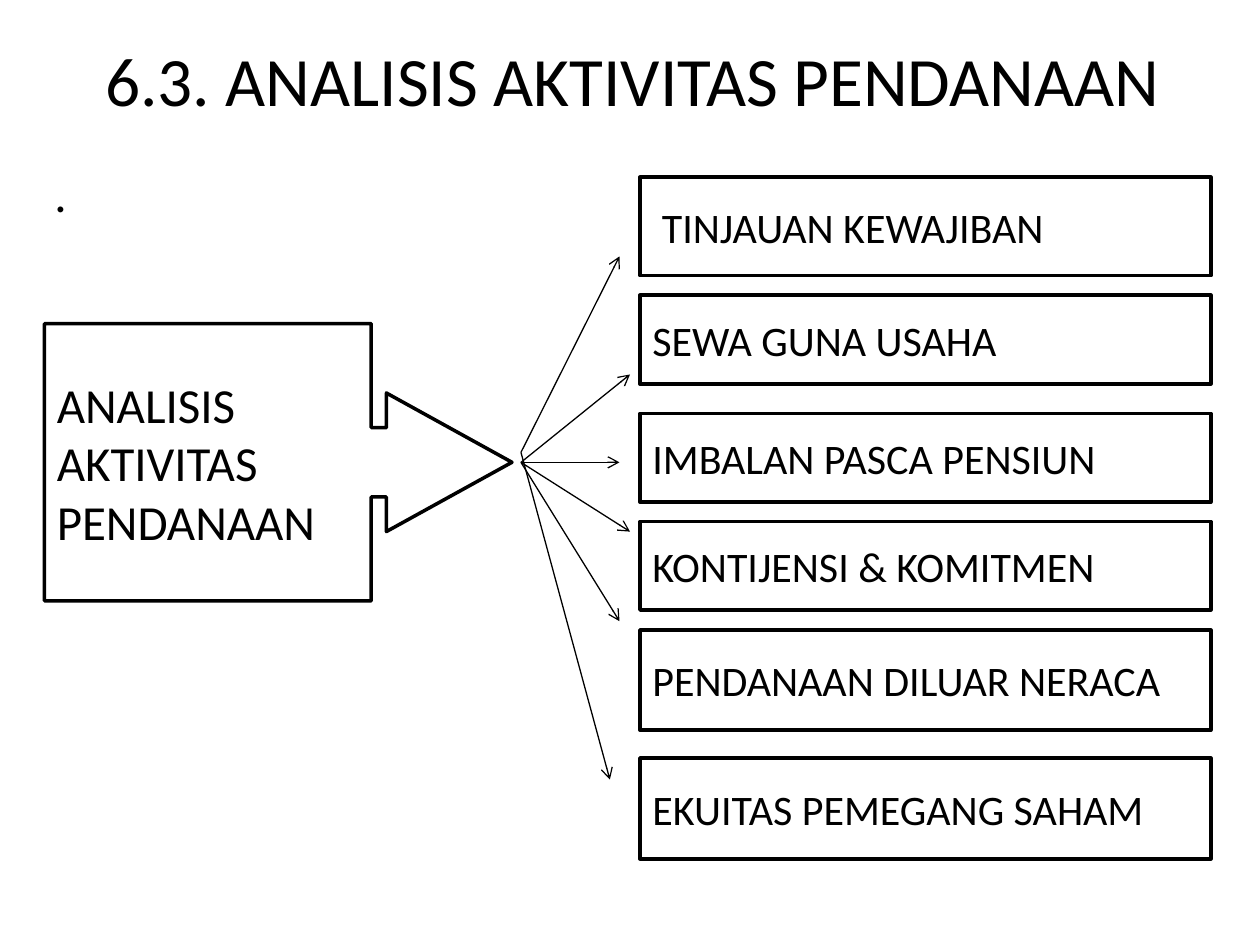
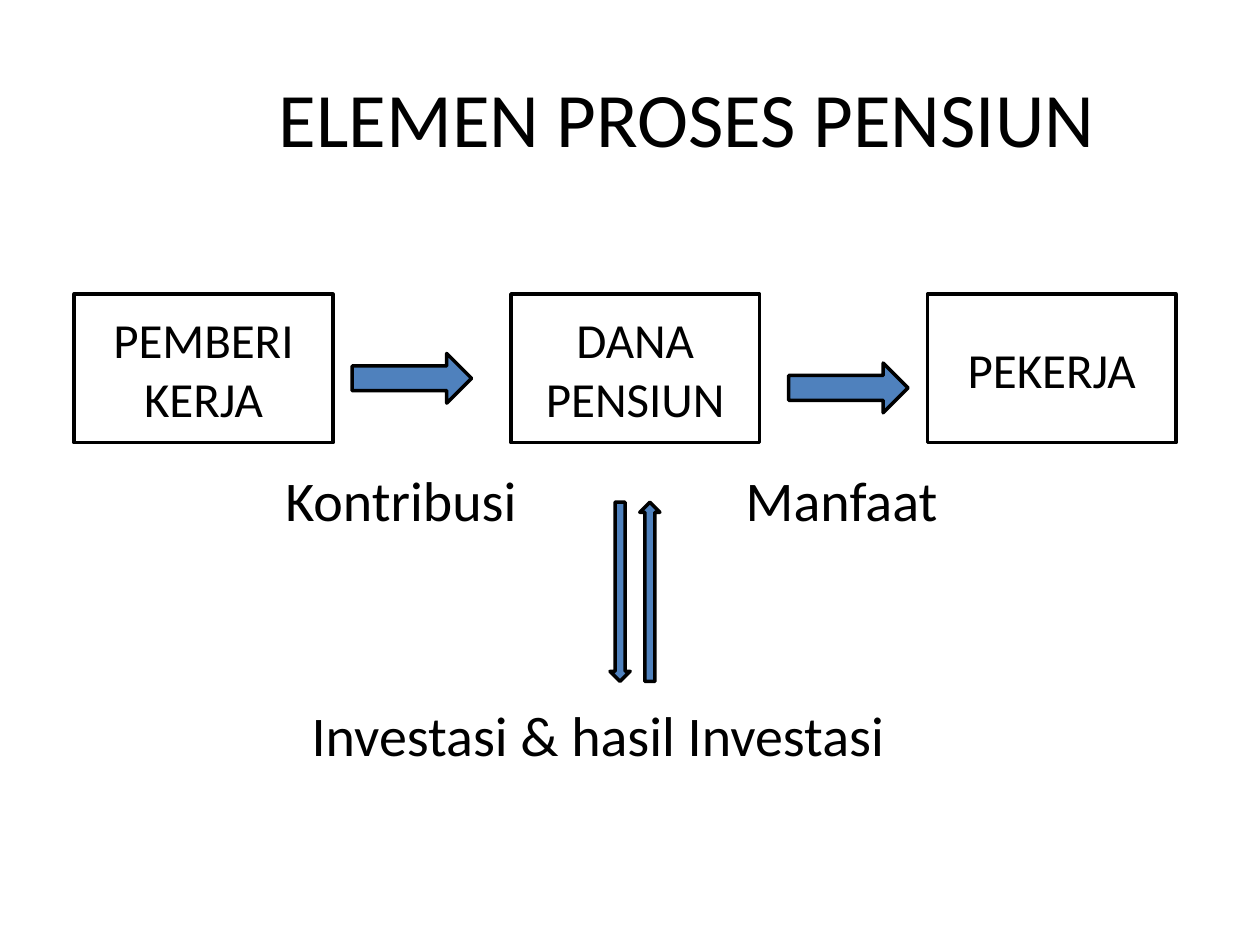
from pptx import Presentation
from pptx.dml.color import RGBColor
from pptx.enum.shapes import MSO_CONNECTOR, MSO_SHAPE
from pptx.enum.text import MSO_ANCHOR, PP_ALIGN
from pptx.oxml.ns import qn
from pptx.util import Pt
from lxml.etree import SubElement

# Shared look
BLACK, WHITE, BLUE = "000000", "FFFFFF", "4F81BD"
FONT = "Calibri"


def colour(hex_string):
    return RGBColor.from_string(hex_string)


def add_box(page, frame, text="", size=24, align=PP_ALIGN.LEFT,
            anchor=MSO_ANCHOR.MIDDLE, kind=None, fill=WHITE):
    """Add a text box, or an outlined shape when a kind is given."""
    lengths = [Pt(value) for value in frame]
    if kind is None:
        box = page.shapes.add_textbox(*lengths)
    else:
        box = page.shapes.add_shape(kind, *lengths)
        box.shadow.inherit = False
        box.fill.solid()
        box.fill.fore_color.rgb = colour(fill)
        box.line.color.rgb = colour(BLACK)
        box.line.width = Pt(2)
    if text:
        box.text_frame.word_wrap = True
        box.text_frame.vertical_anchor = anchor
        para = box.text_frame.paragraphs[0]
        para.alignment = align
        span = para.add_run()
        span.text = text
        for name, value in {"name": FONT, "size": Pt(size)}.items():
            setattr(span.font, name, value)
        span.font.color.rgb = colour(BLACK)
    return box


deck = Presentation()
deck.slide_width, deck.slide_height = Pt(720), Pt(540)
blank = deck.slide_layouts[6]

# Titles
titles = [
    ("6.3. ANALISIS AKTIVITAS PENDANAAN ", (24, 22.5, 684, 45), 39.6),
    ("ELEMEN PROSES PENSIUN", (82, 21.6, 621.5, 90), 44),
]
pages = []
for text, frame, size in titles:
    page = deck.slides.add_slide(blank)
    page.background.fill.solid()
    page.background.fill.fore_color.rgb = colour(WHITE)
    add_box(page, frame, text, size, PP_ALIGN.CENTER)
    pages.append(page)
financing, pension = pages

# Financing: lone body text
add_box(financing, (24, 90, 300, 48), ".", 28, anchor=MSO_ANCHOR.TOP)

# Financing: topics stacked on the right
topics = [
    (" TINJAUAN KEWAJIBAN", 101.3, 56.3),
    ("SEWA GUNA USAHA", 168.7, 50.7),
    ("IMBALAN PASCA PENSIUN", 236.2, 50.8),
    ("KONTIJENSI & KOMITMEN", 298, 50.6),
    ("PENDANAAN DILUAR NERACA", 360, 57.3),
    ("EKUITAS PEMEGANG SAHAM", 433.2, 57.6),
]
for text, top, height in topics:
    add_box(financing, (365.7, top, 326.2, height), text,
            kind=MSO_SHAPE.RECTANGLE)

# Financing: callout pointing at the topics
callout = add_box(financing, (25.4, 185, 267.2, 158.4),
                  "ANALISIS AKTIVITAS PENDANAAN", 28,
                  kind=MSO_SHAPE.RIGHT_ARROW_CALLOUT)
for index, value in enumerate((0.25, 0.25, 0.453, 0.699)):
    callout.adjustments[index] = value

# Financing: arrows fanning out from the callout tip
tip_x = 297.7
fan = [  # start height, end point
    (258.5, 354, 146.5),
    (264.2, 360, 214),
    (264.2, 354, 264.2),
    (264.2, 360, 303.8),
    (264.2, 354, 355),
    (258.5, 348.5, 445.5),
]
for start_y, end_x, end_y in fan:
    arrow = financing.shapes.add_connector(
        MSO_CONNECTOR.STRAIGHT, Pt(tip_x), Pt(start_y), Pt(end_x), Pt(end_y))
    arrow.line.color.rgb = colour(BLACK)
    arrow.line.width = Pt(0.75)
    SubElement(arrow.line._get_or_add_ln(), qn("a:tailEnd"), type="arrow")
    SubElement(arrow._element.spPr, qn("a:effectLst"))

# Pension: flow labels
labels = [
    ("Kontribusi", 156, 262.5, 160),
    ("Manfaat", 419, 262.5, 140),
    ("Investasi & hasil Investasi", 171, 396.5, 380),
]
for text, left, top, width in labels:
    add_box(pension, (left, top, width, 46), text, 32,
            anchor=MSO_ANCHOR.TOP)

# Pension: the three parties
parties = [
    ("PEMBERI KERJA", 42.4, 147.8),
    ("DANA PENSIUN", 292, 142),
    ("PEKERJA", 530, 142),
]
for text, left, width in parties:
    add_box(pension, (left, 168, width, 85), text, 28, PP_ALIGN.CENTER,
            kind=MSO_SHAPE.RECTANGLE)

# Pension: flow arrows
across, along = (68.2, 28.4), (11.5, 102.4)
flows = [
    (MSO_SHAPE.RIGHT_ARROW, (201.3, 202), across),
    (MSO_SHAPE.RIGHT_ARROW, (450.7, 207.5), across),
    (MSO_SHAPE.DOWN_ARROW, (348.6, 287), along),
    (MSO_SHAPE.UP_ARROW, (365.6, 287), along),
]
for kind, place, extent in flows:
    add_box(pension, place + extent, kind=kind, fill=BLUE)

deck.save("out.pptx")
